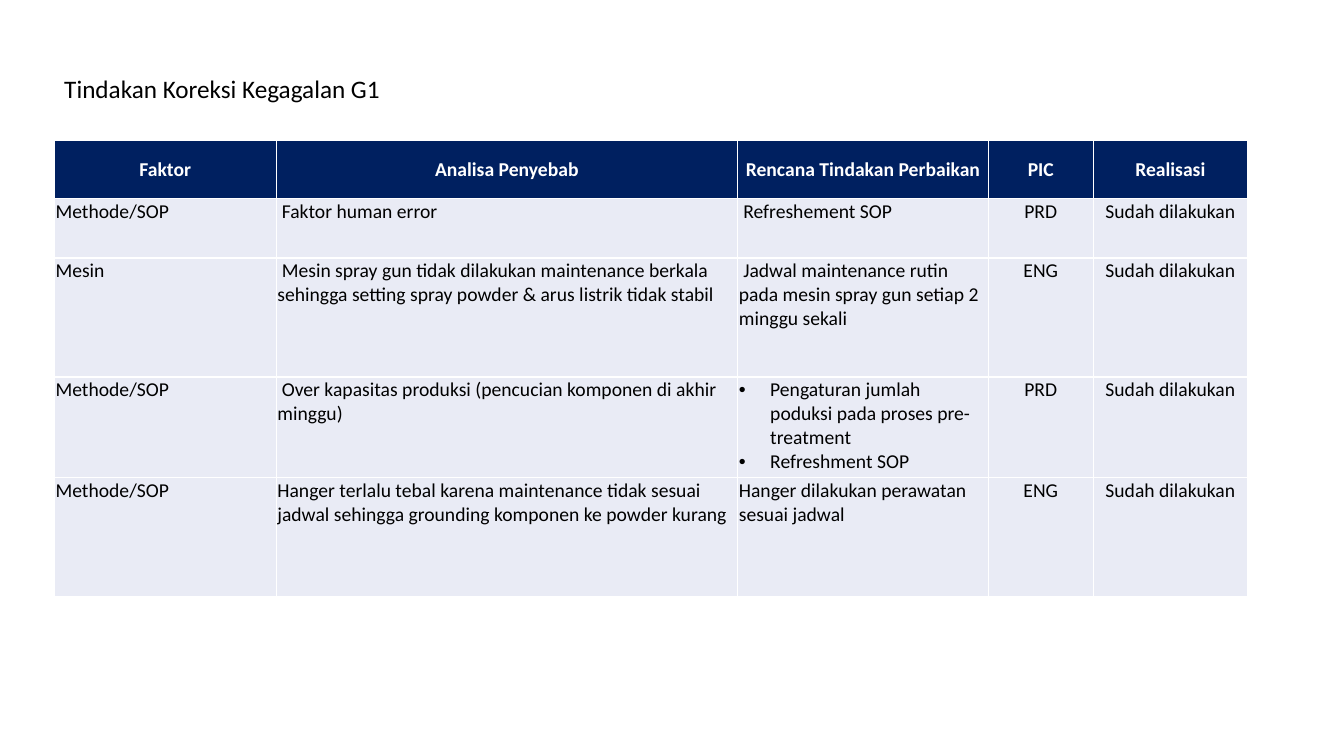
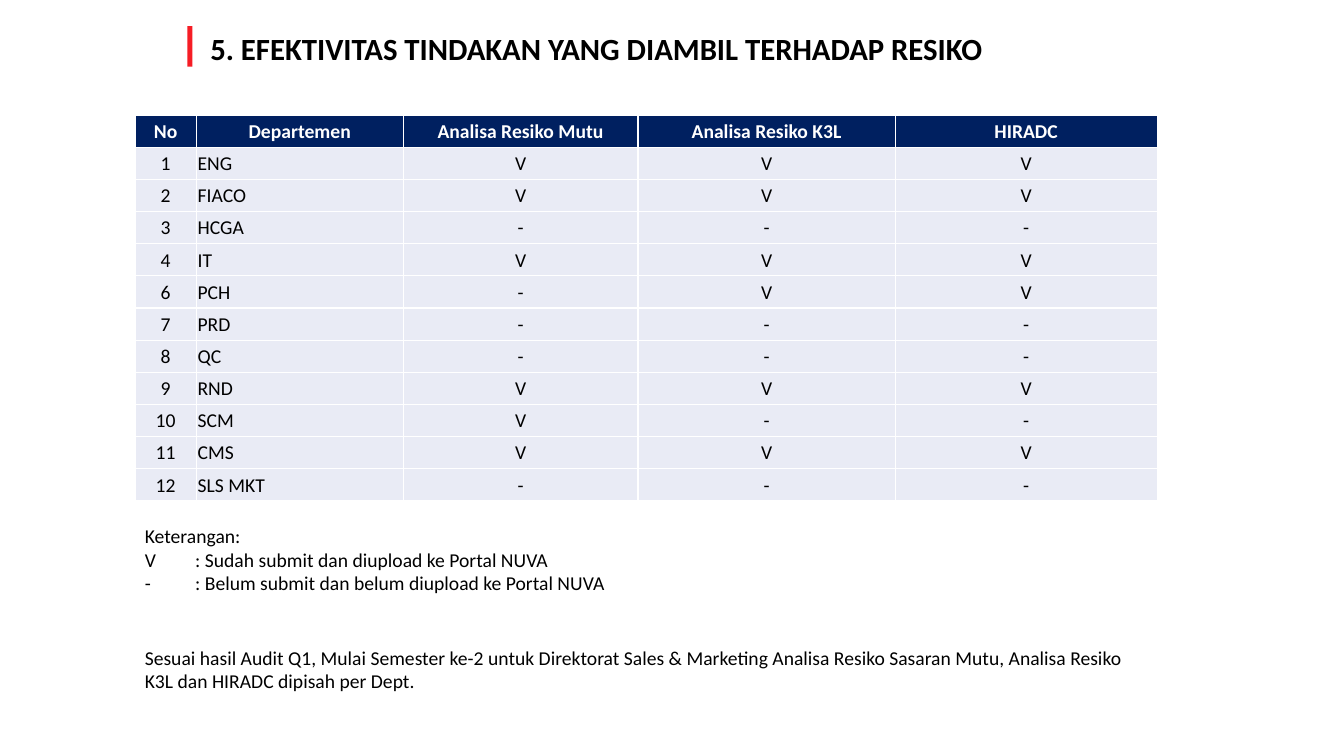
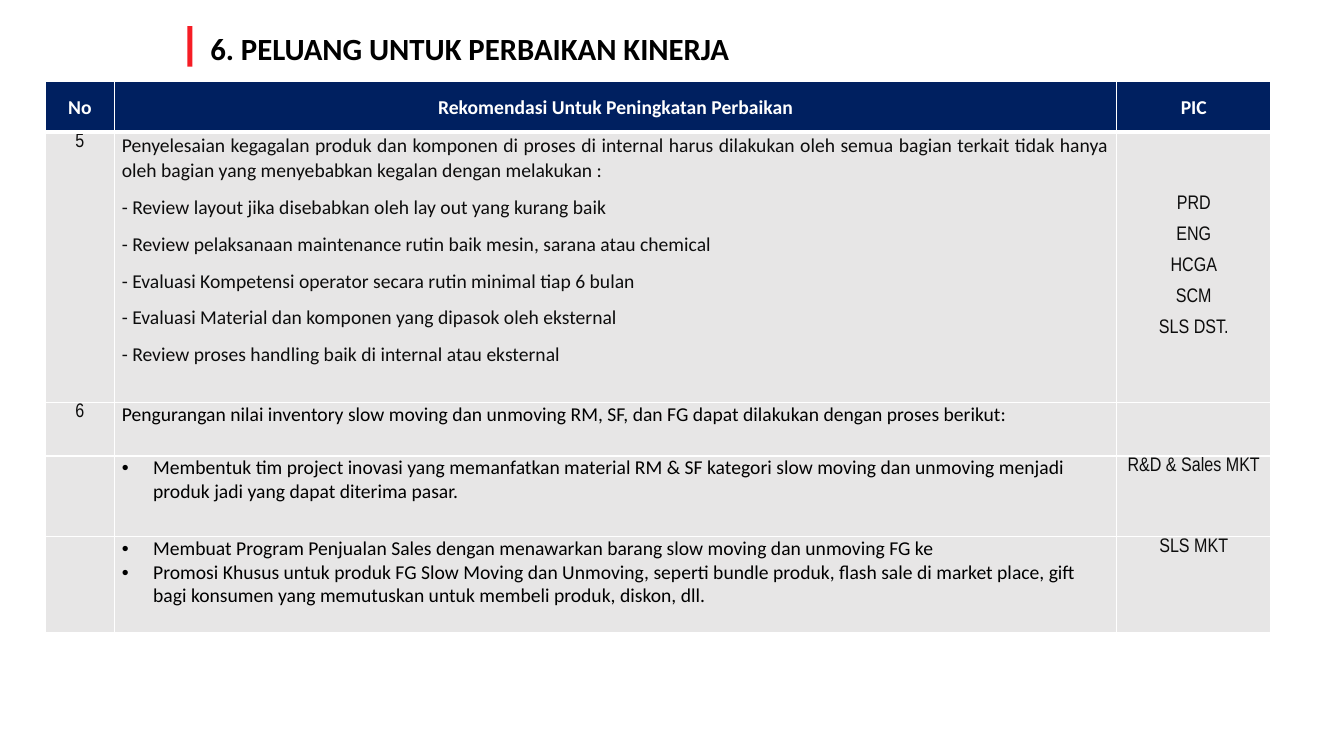
from lxml.etree import SubElement
from pptx import Presentation
from pptx.dml.color import RGBColor
from pptx.enum.shapes import MSO_SHAPE
from pptx.enum.text import MSO_ANCHOR, MSO_AUTO_SIZE, PP_ALIGN
from pptx.oxml.ns import qn
from pptx.util import Cm, Pt

MID = PP_ALIGN.CENTER
BULLET = "• "


def tint(code):
    return RGBColor.from_string(code)


def write(frame, text, size=14, color="000000", font="Calibri", bold=False,
          align=PP_ALIGN.LEFT, line=None, after=None):
    """Fill a frame with one paragraph per item; a bullet sign makes a list item."""
    items = [text] if isinstance(text, str) else text
    for num, item in enumerate(items):
        para = frame.paragraphs[0] if num == 0 else frame.add_paragraph()
        para.alignment = align
        if line:
            para.line_spacing = line
        if after:
            para.space_after = Pt(after)
        if item.startswith(BULLET):
            item = item[len(BULLET):]
            props = para._p.get_or_add_pPr()
            props.set("marL", str(Cm(0.79)))
            props.set("indent", str(-Cm(0.79)))
            SubElement(props, qn("a:buFont"), typeface="Arial")
            SubElement(props, qn("a:buChar"), char=BULLET.strip())
        run = para.add_run()
        run.text = item
        run.font.size = Pt(size)
        run.font.name = font
        run.font.bold = bold
        run.font.color.rgb = tint(color)


class Deck:
    NAVY, RED, WHITE = "002060", "F61D25", "FFFFFF"
    PALE, GREY = "E9EBF5", "E7E6E6"
    TIGHT = (0.03, 0.03, 0.03, 0)

    def __init__(self):
        self.prs = Presentation()
        self.prs.slide_width, self.prs.slide_height = Cm(33.87), Cm(19.05)
        self.slide = None

    def page(self, title=None):
        self.slide = self.prs.slides.add_slide(self.prs.slide_layouts[6])
        if title:
            self.bar(4.72, 0.66, 0.13, 1.02)
            self.text(title, 5.05, 0.46, 24.08, 1.5, size=22, bold=True,
                      anchor=MSO_ANCHOR.MIDDLE)

    def bar(self, left, top, width, height):
        bar = self.slide.shapes.add_shape(
            MSO_SHAPE.RECTANGLE, Cm(left), Cm(top), Cm(width), Cm(height))
        bar.shadow.inherit = False
        bar.fill.solid()
        bar.fill.fore_color.rgb = tint(self.RED)
        bar.line.fill.background()

    def text(self, text, left, top, width, height, wrap=True,
             anchor=MSO_ANCHOR.TOP, **look):
        box = self.slide.shapes.add_textbox(
            Cm(left), Cm(top), Cm(width), Cm(height))
        frame = box.text_frame
        frame.word_wrap = wrap
        frame.auto_size = MSO_AUTO_SIZE.NONE
        frame.vertical_anchor = anchor
        write(frame, text, **look)

    def edge(self, cell, side, width):
        line = SubElement(cell._tc.get_or_add_tcPr(), qn("a:ln" + side),
                          w=str(Pt(width)))
        fill = SubElement(line, qn("a:solidFill"))
        SubElement(fill, qn("a:srgbClr"), val=self.WHITE)

    def cell(self, cell, text, fill, inset=TIGHT, anchor=MSO_ANCHOR.TOP,
             over=1, under=1, **look):
        for side, width in zip("LRTB", (1, 1, over, under)):
            self.edge(cell, side, width)
        cell.fill.solid()
        cell.fill.fore_color.rgb = tint(fill)
        cell.margin_left, cell.margin_top, cell.margin_right, cell.margin_bottom = (
            Cm(side) for side in inset)
        cell.vertical_anchor = anchor
        if text:
            write(cell.text_frame, text, **look)

    def table(self, left, top, cols, highs, head, rows, looks, rule=1, **base):
        """Looks go by column; a (text, look) pair changes a single cell."""
        grid = self.slide.shapes.add_table(
            len(highs), len(cols), Cm(left), Cm(top),
            Cm(sum(cols)), Cm(sum(highs))).table
        grid.horz_banding = False
        for col, width in zip(grid.columns, cols):
            col.width = Cm(width)
        for row, high in zip(grid.rows, highs):
            row.height = Cm(high)
        for x, name in enumerate(head):
            self.cell(grid.cell(0, x), name, self.NAVY, under=rule,
                      anchor=MSO_ANCHOR.MIDDLE, color=self.WHITE,
                      bold=True, align=MID)
        for y, row in enumerate(rows, 1):
            for x, item in enumerate(row):
                text, own = item if isinstance(item, tuple) else (item, {})
                look = {**base, **looks[x], **own}
                self.cell(grid.cell(y, x), text,
                          over=rule if y == 1 else 1, **look)


def main():
    deck = Deck()
    left, mid = {}, {"align": MID}

    # Corrective actions
    deck.page()
    done = "Sudah dilakukan"
    deck.table(
        1.37, 3.53, [5.59, 11.63, 6.32, 2.64, 3.89], [1.47, 1.5, 3, 2.54, 3],
        ["Faktor", "Analisa Penyebab", "Rencana Tindakan Perbaikan", "PIC",
         "Realisasi"],
        [["Methode/SOP", " Faktor human error", " Refreshement SOP", "PRD", done],
         ["Mesin",
          " Mesin spray gun tidak dilakukan maintenance berkala sehingga "
          "setting spray powder & arus listrik tidak stabil",
          " Jadwal maintenance rutin pada mesin spray gun setiap "
          "2 minggu sekali", "ENG", done],
         ["Methode/SOP",
          " Over kapasitas produksi (pencucian komponen di akhir minggu)",
          ["• Pengaturan jumlah poduksi pada proses pre-treatment",
           "• Refreshment SOP"], "PRD", done],
         ["Methode/SOP",
          "Hanger terlalu tebal karena maintenance tidak sesuai jadwal "
          "sehingga grounding komponen ke powder kurang",
          "Hanger dilakukan perawatan sesuai jadwal", "ENG", done]],
        [left, left, left, mid, mid], fill=deck.PALE)
    deck.text("Tindakan Koreksi Kegagalan G1", 1.37, 1.73, 8.56, 1.02,
              wrap=False, size=18)

    # Risk status by department
    deck.page("5. EFEKTIVITAS TINDAKAN YANG DIAMBIL TERHADAP RESIKO")
    marks = [("1", "ENG", "VVV"), ("2", "FIACO", "VVV"), ("3", "HCGA", "---"),
             ("4", "IT", "VVV"), ("6", "PCH", "-VV"), ("7", "PRD", "---"),
             ("8", "QC", "---"), ("9", "RND", "VVV"), ("10", "SCM", "V--"),
             ("11", "CMS", "VVV"), ("12", "SLS MKT", "---")]
    deck.table(
        3.4, 2.9, [1.55, 5.21, 5.92, 6.48, 6.6], [0.81] * (len(marks) + 1),
        ["No", "Departemen", "Analisa Resiko Mutu", "Analisa Resiko K3L",
         "HIRADC"],
        [[num, dept, *state] for num, dept, state in marks],
        [mid, left, mid, mid, mid], fill=deck.PALE, anchor=MSO_ANCHOR.MIDDLE)
    deck.text(["Keterangan:",
               "V\t: Sudah submit dan diupload ke Portal NUVA",
               "-\t: Belum submit dan belum diupload ke Portal NUVA"],
              3.4, 13.08, 13.36, 2.06, wrap=False)
    deck.text("Sesuai hasil Audit Q1, Mulai Semester ke-2 untuk Direktorat "
              "Sales & Marketing Analisa Resiko Sasaran Mutu, Analisa Resiko "
              "K3L dan HIRADC dipisah per Dept.", 3.4, 16.15, 25.73, 1.5)

    # Improvement advice
    deck.page("6. PELUANG UNTUK PERBAIKAN KINERJA")
    loose = {"color": "0D0D0D", "line": 1.07, "after": 8}
    slim = {**loose, "font": "Arial Narrow", "align": MID}
    deck.table(
        1.14, 2.06, [1.75, 25.25, 3.89], [1.27, 6.81, 1.35, 2.03, 2.41],
        ["No", "Rekomendasi Untuk Peningkatan Perbaikan", "PIC"],
        [["5",
          (["Penyelesaian kegagalan produk dan komponen di proses di internal "
            "harus dilakukan oleh semua bagian terkait tidak hanya oleh bagian "
            "yang menyebabkan kegalan dengan melakukan :",
            "- Review layout jika disebabkan oleh lay out yang kurang baik",
            "- Review pelaksanaan maintenance rutin baik mesin, sarana atau "
            "chemical",
            "- Evaluasi Kompetensi operator secara rutin minimal tiap 6 bulan",
            "- Evaluasi Material dan komponen yang dipasok oleh eksternal",
            "- Review proses handling baik di internal atau eksternal"],
           {**loose, "align": PP_ALIGN.JUSTIFY}),
          (["PRD", "ENG", "HCGA", "SCM", "SLS DST."],
           {"inset": (0.18, 1.55, 0.18, 0)})],
         ["6",
          "Pengurangan nilai inventory slow moving dan unmoving RM, SF, dan FG "
          "dapat dilakukan dengan proses berikut:", ""],
         ["",
          "• Membentuk tim project inovasi yang memanfatkan material RM & SF "
          "kategori slow moving dan unmoving menjadi produk jadi yang dapat "
          "diterima pasar.", "R&D & Sales MKT"],
         ["",
          ["• Membuat Program Penjualan Sales dengan menawarkan barang slow "
           "moving dan unmoving FG ke",
           "• Promosi Khusus untuk produk FG Slow Moving dan Unmoving, seperti "
           "bundle produk, flash sale di market place, gift bagi konsumen yang "
           "memutuskan untuk membeli produk, diskon, dll."], "SLS MKT"]],
        [slim, left, slim], rule=3, fill=deck.GREY, inset=(0.18, 0, 0.18, 0))

    deck.prs.save("out.pptx")


if __name__ == "__main__":
    main()
